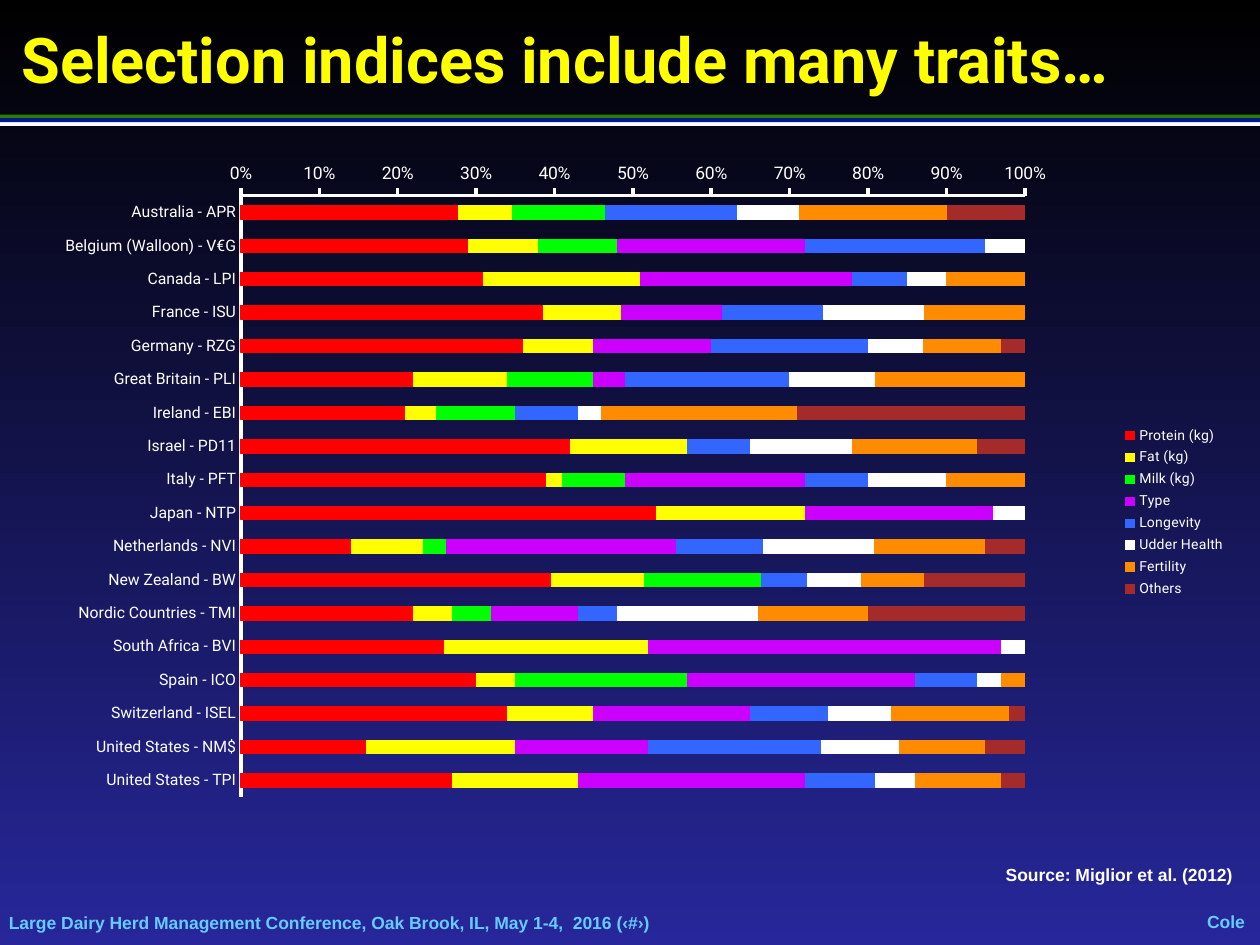
from lxml import etree
from pptx import Presentation
from pptx.chart.data import CategoryChartData
from pptx.dml.color import RGBColor
from pptx.enum.chart import (XL_AXIS_CROSSES, XL_CHART_TYPE,
                             XL_LEGEND_POSITION, XL_TICK_MARK)
from pptx.enum.shapes import MSO_SHAPE
from pptx.enum.text import MSO_ANCHOR, PP_ALIGN
from pptx.oxml.ns import qn
from pptx.util import Inches, Pt

BAR = XL_CHART_TYPE.BAR_STACKED_100
NO_TICK, TICK_OUT = XL_TICK_MARK.NONE, XL_TICK_MARK.OUTSIDE
LEFT, CENTER, RIGHT = PP_ALIGN.LEFT, PP_ALIGN.CENTER, PP_ALIGN.RIGHT
TOP, MIDDLE = MSO_ANCHOR.TOP, MSO_ANCHOR.MIDDLE

THEME = {
    "bg": ("000000", "27279B"),
    "title": "FFFF00", "text": "FFFFFF", "footer": "66CCFF",
    "heading_font": "Roboto", "body_font": "Arial",
    "title_size": 36, "body_size": 10, "category_size": 9, "legend_size": 8,
}

# Content
TITLE = "Selection indices include many traits…"
SOURCE = "Source: Miglior et al. (2012)"
FOOTER = "Large Dairy Herd Management Conference, Oak Brook, IL, May 1-4,  2016 (‹#›)"
AUTHOR = "Cole"
STRIPES = [(0.91, "2A7E00"), (0.97, "FFFFFF"), (0.94, "001799")]
INDICES = [
    "Australia - APR", "Belgium (Walloon) - V€G", "Canada - LPI",
    "France - ISU", "Germany - RZG", "Great Britain - PLI", "Ireland - EBI",
    "Israel - PD11", "Italy - PFT", "Japan - NTP", "Netherlands - NVI",
    "New Zealand - BW", "Nordic Countries - TMI", "South Africa - BVI",
    "Spain - ICO", "Switzerland - ISEL", "United States - NM$",
    "United States - TPI",
]
NA = None
TRAITS = [
    ("Protein (kg)", "FF0000",
     [28, 29, 31, 39, 36, 22, 21, 42, 39, 53, 14, 40, 22, 26, 30, 34, 16, 27]),
    ("Fat (kg)", "FFFF00",
     [7, 9, 20, 10, 9, 12, 4, 15, 2, 19, 9, 12, 5, 26, 5, 11, 19, 16]),
    ("Milk (kg)", "00FF00",
     [12, 10, NA, NA, NA, 11, 10, NA, 8, NA, 3, 15, 5, NA, 22, NA, NA, NA]),
    ("Type", "CC00FF",
     [NA, 24, 27, 13, 15, 4, NA, NA, 23, 24, 29, NA, 11, 45, 29, 20, 17, 29]),
    ("Longevity", "3366FF",
     [17, 23, 7, 13, 20, 21, 8, 8, 8, NA, 11, 6, 5, NA, 8, 10, 22, 9]),
    ("Udder Health", "FFFFFF",
     [8, 5, 5, 13, 7, 11, 3, 13, 10, 4, 14, 7, 18, 3, 3, 8, 10, 5]),
    ("Fertility", "FF8C00",
     [19, NA, 10, 13, 10, 19, 25, 16, 10, NA, 14, 8, 14, NA, 3, 15, 11, 11]),
    ("Others", "A52A2A",
     [10, NA, NA, NA, 3, NA, 29, 6, NA, NA, 5, 13, 20, NA, NA, 2, 5, 3]),
]
PLOT = {"x": 0.201, "y": 0.039, "w": 0.628, "h": 0.876}


def rgb(value):
    return RGBColor.from_string(value)


def style_font(font, size, color, name, bold=False):
    font.size, font.name, font.bold = Pt(size), name, bold
    font.color.rgb = rgb(color)


def add_text(s, text, box, size, color, name, align=LEFT, anchor=MIDDLE,
             inset=0, wrap=True):
    tf = s.shapes.add_textbox(*map(Inches, box)).text_frame
    tf.word_wrap, tf.vertical_anchor = wrap, anchor
    tf.margin_left = tf.margin_right = Inches(inset)
    tf.margin_top = tf.margin_bottom = Inches(inset)
    p = tf.paragraphs[0]
    p.text, p.alignment = text, align
    style_font(p.font, size, color, name, bold=True)


def set_plot_layout(chart):
    plot_area = chart._chartSpace.chart.plotArea
    for old in plot_area.findall(qn("c:layout")):
        plot_area.remove(old)
    layout = etree.Element(qn("c:layout"))
    manual = etree.SubElement(layout, qn("c:manualLayout"))
    settings = [("layoutTarget", "inner"), ("xMode", "edge"), ("yMode", "edge")]
    for tag, value in settings + list(PLOT.items()):
        etree.SubElement(manual, qn(f"c:{tag}")).set("val", str(value))
    plot_area.insert(0, layout)


def add_index_chart(s):
    data = CategoryChartData()
    data.categories = INDICES
    for name, _, values in TRAITS:
        data.add_series(name, values)
    box = map(Inches, (-0.08, 1.3, 9.91, 5.49))
    chart = s.shapes.add_chart(BAR, *box, data).chart
    font = THEME["heading_font"]
    style_font(chart.font, THEME["body_size"], THEME["text"], font)
    chart.has_title = False
    set_plot_layout(chart)

    # Bars
    plot = chart.plots[0]
    plot.gap_width, plot.overlap, plot.vary_by_categories = 150, 100, False
    for series, (_, color, _) in zip(plot.series, TRAITS):
        series.format.fill.solid()
        series.format.fill.fore_color.rgb = rgb(color)
        series.format.line.color.rgb = rgb(color)
        series.format.line.width = Pt(0.5)

    # Axes: first category on top, percentages at the bottom
    cat, val = chart.category_axis, chart.value_axis
    for axis, tick, size in ((cat, NO_TICK, THEME["category_size"]),
                             (val, TICK_OUT, THEME["body_size"])):
        axis.has_major_gridlines = False
        axis.major_tick_mark, axis.minor_tick_mark = tick, NO_TICK
        axis.format.line.color.rgb = rgb(THEME["text"])
        axis.format.line.width = Pt(2)
        style_font(axis.tick_labels.font, size, THEME["text"], font)
    cat.reverse_order = True
    cat.crosses = XL_AXIS_CROSSES.MAXIMUM
    val.minimum_scale, val.maximum_scale, val.major_unit = 0, 1, 0.1
    val.tick_labels.number_format = "0%"
    val.tick_labels.number_format_is_linked = False

    # Legend
    chart.has_legend = True
    chart.legend.position = XL_LEGEND_POSITION.RIGHT
    chart.legend.include_in_layout = False
    style_font(chart.legend.font, THEME["legend_size"], THEME["text"], font)


def main():
    prs = Presentation()
    prs.slide_width, prs.slide_height = Inches(10), Inches(7.5)
    s = prs.slides.add_slide(prs.slide_layouts[6])

    # Background, dark at the top
    fill = s.background.fill
    fill.gradient()
    fill.gradient_angle = 270
    for stop, position, color in zip(fill.gradient_stops, (0, 1), THEME["bg"]):
        stop.position, stop.color.rgb = position, rgb(color)

    # Footer
    size, body = THEME["body_size"], THEME["body_font"]
    add_text(s, FOOTER, (0.07, 7.24, 8.09, 0.17), size, THEME["footer"], body)
    add_text(s, AUTHOR, (9.58, 7.23, 0.3, 0.17), size, THEME["footer"], body,
             align=CENTER, wrap=False)

    # Stripes under the title
    for top, color in STRIPES:
        sp = s.shapes.add_shape(MSO_SHAPE.RECTANGLE, 0, Inches(top),
                                prs.slide_width, Inches(0.03))
        sp.shadow.inherit = False
        sp.fill.solid()
        sp.fill.fore_color.rgb = rgb(color)
        sp.line.fill.background()

    # Source, title and chart
    add_text(s, SOURCE, (5.74, 6.81, 4.09, 0.27), size, THEME["text"], body,
             align=RIGHT, anchor=TOP, inset=0.05)
    add_text(s, TITLE, (0.17, 0.11, 9.66, 0.7), THEME["title_size"],
             THEME["title"], THEME["heading_font"])
    add_index_chart(s)

    prs.save("out.pptx")


if __name__ == "__main__":
    main()
